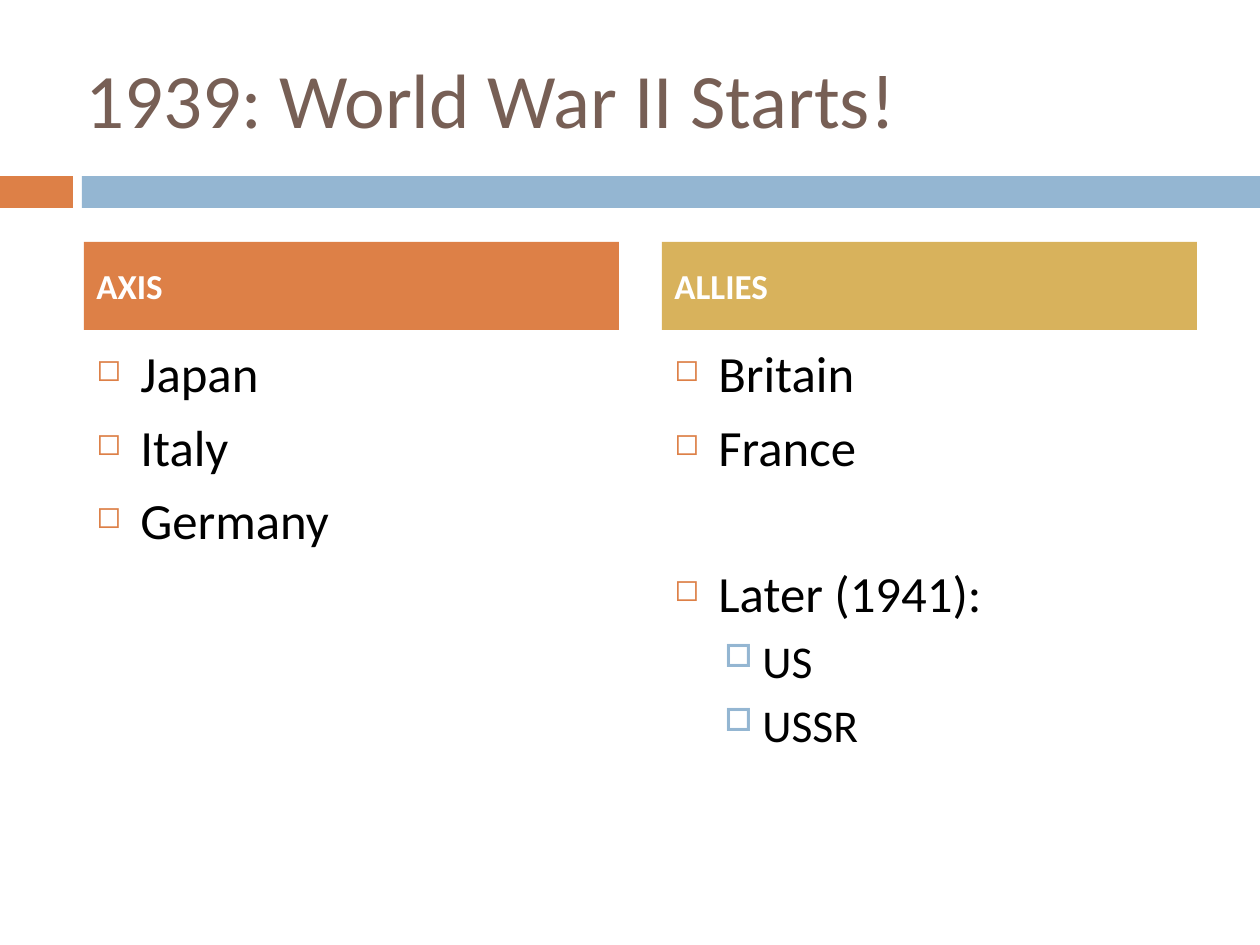
"""Build a slide that sets the Axis beside the Allies in 1939."""
from lxml.etree import SubElement
from pptx import Presentation
from pptx.dml.color import RGBColor as Rgb
from pptx.enum.shapes import MSO_SHAPE as Shape
from pptx.enum.text import MSO_ANCHOR as Anchor
from pptx.oxml.ns import qn
from pptx.util import Pt

EMU_PER_PX = 914400 / 126
COLORS = {
    "title": "775F55",
    "orange": "DD8047",
    "blue": "94B6D2",
    "gold": "D8B25C",
    "text": "000000",
    "white": "FFFFFF",
}
TITLE = {"size": 44, "color": "title"}
HEADING = {"size": 20, "color": "white", "bold": True}
LEVELS = [
    {"size": 29, "before": 7, "margin": 44, "hang": 44,
     "mark": "◻", "mark_color": "orange", "mark_size": 60},
    {"size": 26, "before": 5.5, "margin": 88, "hang": 38,
     "mark": "□", "mark_color": "blue", "mark_size": 70},
]
GROUP_GAP = 42
COLUMN_WIDTH = 535
COLUMNS = [
    {"left": 84, "heading": "AXIS", "fill": "orange",
     "items": [("Japan", 0, 0), ("Italy", 0, 0), ("Germany", 0, 0)]},
    {"left": 662, "heading": "ALLIES", "fill": "gold",
     "items": [("Britain", 0, 0), ("France", 0, 0),
               ("Later (1941):", 0, GROUP_GAP), ("US", 1, 0), ("USSR", 1, 0)]},
]


def px(length):
    """Turn px into EMU."""
    return round(length * EMU_PER_PX)


def rgb(name):
    """Look up a colour by name."""
    return Rgb.from_string(COLORS[name])


def write(para, text, size, color, bold=False):
    """Add one formatted span of text to a paragraph."""
    span = para.add_run()
    span.text = text
    font_format = {"name": "Calibri", "size": Pt(size), "bold": bold}
    for name, value in font_format.items():
        setattr(span.font, name, value)
    span.font.color.rgb = rgb(color)


def add_bar(page, area, fill):
    """Add a plain filled rectangle."""
    bar = page.shapes.add_shape(Shape.RECTANGLE, *map(px, area))
    bar.shadow.inherit = False
    bar.fill.solid()
    bar.fill.fore_color.rgb = rgb(fill)
    bar.line.fill.background()
    return bar


def add_text_box(page, area, anchor=Anchor.TOP):
    """Add a wrapping text box and return its text frame."""
    frame = page.shapes.add_textbox(*map(px, area)).text_frame
    frame.word_wrap = True
    frame.vertical_anchor = anchor
    return frame


def add_bullet(para, level):
    """Give a paragraph the indent and bullet of its level."""
    properties = para._p.get_or_add_pPr()
    properties.set("marL", str(px(level["margin"])))
    properties.set("indent", str(-px(level["hang"])))
    color = SubElement(properties, qn("a:buClr"))
    SubElement(color, qn("a:srgbClr"), val=COLORS[level["mark_color"]])
    SubElement(properties, qn("a:buSzPct"), val=str(level["mark_size"] * 1000))
    SubElement(properties, qn("a:buChar"), char=level["mark"])


def add_list(page, area, items):
    """Add a bulleted list of (text, level, extra space before) items."""
    frame = add_text_box(page, area)
    for index, (text, depth, gap) in enumerate(items):
        para = frame.add_paragraph() if index else frame.paragraphs[0]
        level = LEVELS[depth]
        para.level = depth
        para.space_before = Pt(level["before"] + gap)
        add_bullet(para, level)
        write(para, text, level["size"], "text")


def add_heading(page, area, text, fill):
    """Add a coloured column heading."""
    frame = add_bar(page, area, fill).text_frame
    frame.word_wrap = True
    frame.vertical_anchor = Anchor.MIDDLE
    para = frame.paragraphs[0]
    para.alignment = 1
    para.space_before = Pt(7)
    write(para, text, **HEADING)


def main():
    """Build and save the deck."""
    deck = Presentation()
    deck.slide_width, deck.slide_height = px(1260), px(945)
    page = deck.slides.add_slide(deck.slide_layouts[6])
    add_bar(page, (0, 176, 73, 32), "orange")
    add_bar(page, (82, 176, 1178, 32), "blue")
    title = add_text_box(page, (73, 38, 1124, 120), Anchor.MIDDLE)
    write(title.paragraphs[0], "1939: World War II Starts!", **TITLE)
    for column in COLUMNS:
        left = column["left"]
        add_list(page, (left, 336, COLUMN_WIDTH, 494), column["items"])
        add_heading(page, (left, 242, COLUMN_WIDTH, 88),
                    column["heading"], column["fill"])
    deck.save("out.pptx")


if __name__ == "__main__":
    main()
